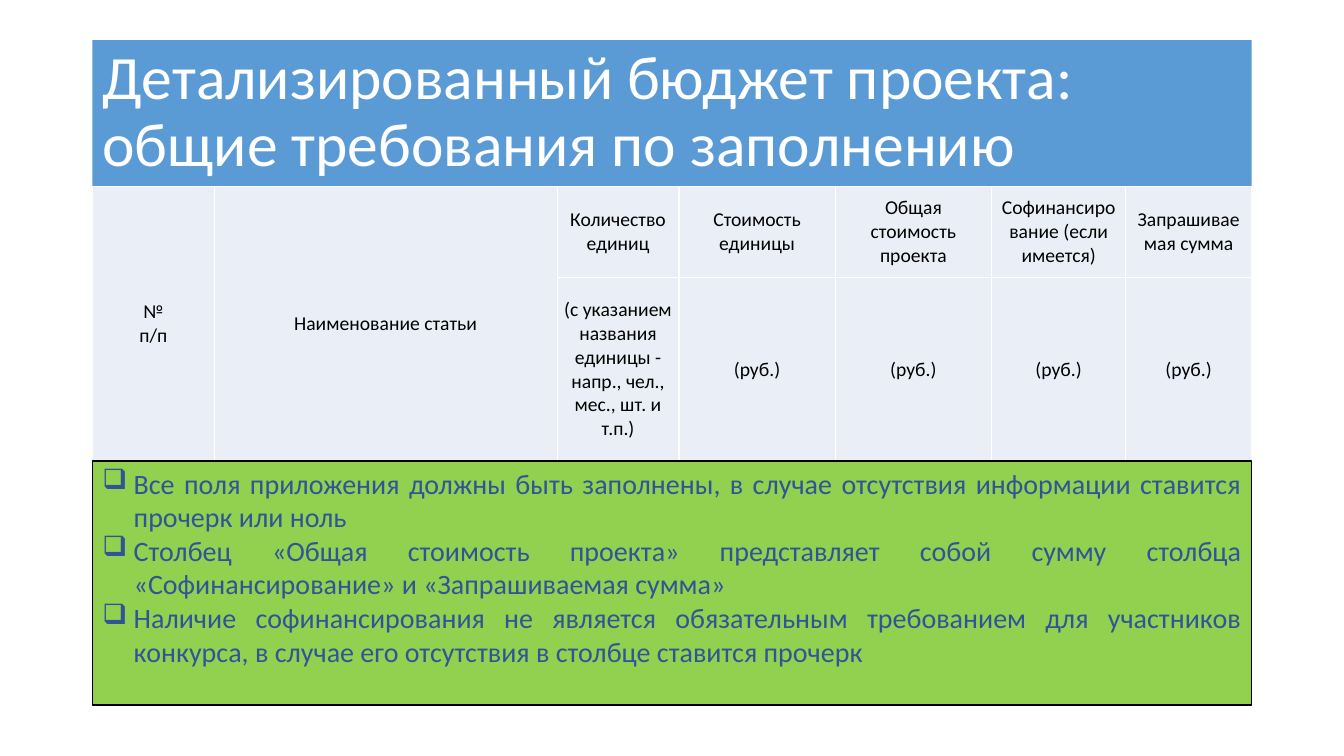
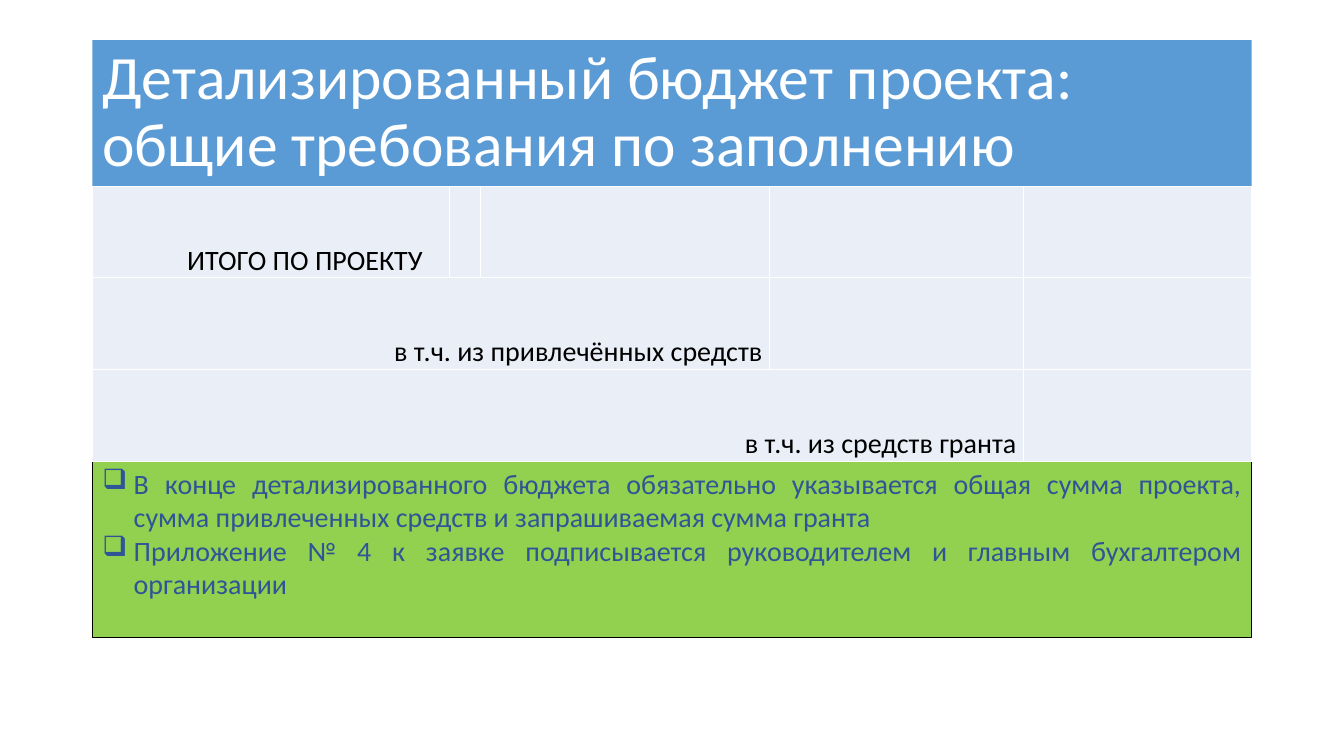
from dataclasses import dataclass

from lxml.etree import SubElement as Sub
from pptx import Presentation
from pptx.dml.color import RGBColor as Rgb
from pptx.enum.shapes import MSO_SHAPE as Shape
from pptx.enum.text import MSO_ANCHOR as Anchor, MSO_AUTO_SIZE as Fit, PP_ALIGN as Align
from pptx.oxml.ns import qn
from pptx.util import Cm, Pt


@dataclass(frozen=True)
class Theme:
    font: str = "Calibri"
    white: Rgb = Rgb(0xFF, 0xFF, 0xFF)
    black: Rgb = Rgb(0, 0, 0)
    band: Rgb = Rgb(0x5B, 0x9B, 0xD5)
    cell: Rgb = Rgb(0xEA, 0xEF, 0xF7)
    green: Rgb = Rgb(0x92, 0xD0, 0x50)
    navy: Rgb = Rgb(0x2F, 0x55, 0x97)
    title: int = 44
    body: int = 20
    small: int = 14


T = Theme()

# Shared layout: one column holding title, table and notes
LEFT, WIDTH = Cm(2.33), Cm(29.21)
TOP, HEAD = Cm(1.01), Cm(3.68)
ROW = 2.31
GRID = TOP + HEAD
NOTES = GRID + 3 * Cm(ROW)
INDENT = Cm(0.79)

TITLE = "Детализированный бюджет проекта: общие требования по заполнению"


def style(frame, size, color, align):
    for para in frame.paragraphs:
        para.alignment = align
        for run in para.runs:
            run.font.name = T.font
            run.font.size = Pt(size)
            run.font.color.rgb = color


def paint(item, color):
    item.fill.solid()
    item.fill.fore_color.rgb = color


def add_slide(deck):
    """Title-only slide with the blue title band."""
    slide = deck.slides.add_slide(deck.slide_layouts[5])
    title = slide.shapes.title
    title.left, title.top, title.width, title.height = LEFT, TOP, WIDTH, HEAD
    paint(title, T.band)
    frame = title.text_frame
    frame.text = TITLE
    frame.word_wrap = True
    frame.auto_size = Fit.NONE
    frame.vertical_anchor = Anchor.MIDDLE
    frame.paragraphs[0].line_spacing = 0.9
    style(frame, T.title, T.white, Align.LEFT)
    return slide


def edge(cell):
    """White borders on all four sides."""
    props = cell._tc.get_or_add_tcPr()
    for side in ("lnL", "lnR", "lnT", "lnB"):
        line = Sub(props, qn(f"a:{side}"), w=str(Pt(1)))
        fill = Sub(line, qn("a:solidFill"))
        Sub(fill, qn("a:srgbClr"), val=str(T.white))


def add_grid(slide, cols, rows, texts, spans, size, align, anchor, pad):
    """Table; texts maps (row, col) to text, spans pairs corner cells."""
    high = sum(Cm(r) for r in rows)
    grid = slide.shapes.add_table(len(rows), len(cols), LEFT, GRID, WIDTH, high).table
    grid.first_row = grid.horz_banding = False
    for col, wide in zip(grid.columns, cols):
        col.width = Cm(wide)
    for row, tall in zip(grid.rows, rows):
        row.height = Cm(tall)
    for cell in grid.iter_cells():
        edge(cell)
        paint(cell, T.cell)
        cell.margin_left = cell.margin_right = Cm(pad)
        cell.margin_top = cell.margin_bottom = 0
        cell.vertical_anchor = anchor
    for start, end in spans:
        grid.cell(*start).merge(grid.cell(*end))
    for place, text in texts.items():
        frame = grid.cell(*place).text_frame
        frame.text = text
        style(frame, size, T.black, align)
    return grid


def add_notes(slide, high, lines):
    """Green box with hollow-square bullets."""
    box = slide.shapes.add_shape(Shape.RECTANGLE, LEFT, NOTES, WIDTH, Cm(high))
    box.shadow.inherit = False
    paint(box, T.green)
    box.line.color.rgb = T.black
    box.line.width = Pt(1)
    frame = box.text_frame
    frame.word_wrap = True
    frame.vertical_anchor = Anchor.TOP
    frame.text = "\n".join(lines)
    for para in frame.paragraphs:
        props = para._p.get_or_add_pPr()
        props.set("marL", str(INDENT))
        props.set("indent", str(-INDENT))
        Sub(props, qn("a:buChar"), char="❑")
    style(frame, T.body, T.navy, Align.JUSTIFY)


def add_heads(deck):
    """Column headings of the budget form."""
    slide = add_slide(deck)
    heads = ["№\nп/п", "Наименование статьи", "Количество единиц",
             "Стоимость единицы", "Общая стоимость проекта",
             "Софинансирование (если имеется)", "Запрашиваемая сумма"]
    texts = {(0, i): head for i, head in enumerate(heads)}
    texts[1, 2] = "(с указанием названия единицы - напр., чел., мес., шт. и т.п.)"
    texts.update({(1, i): "(руб.)" for i in range(3, 7)})
    add_grid(slide, [3.07, 8.64, 3.07, 3.94, 3.94, 3.38, 3.17], [ROW, 2 * ROW],
             texts, [((0, i), (1, i)) for i in range(2)],
             T.small, Align.CENTER, Anchor.MIDDLE, 0.16)
    add_notes(slide, 6.15, [
        "Все поля приложения должны быть заполнены, в случае отсутствия "
        "информации ставится прочерк или ноль",
        "Столбец «Общая стоимость проекта» представляет собой сумму столбца "
        "«Софинансирование» и «Запрашиваемая сумма»",
        "Наличие софинансирования не является обязательным требованием для "
        "участников конкурса, в случае его отсутствия в столбце ставится прочерк",
    ])


def add_sums(deck):
    """Closing totals of the budget form."""
    slide = add_slide(deck)
    add_notes(slide, 4.45, [
        "В конце детализированного бюджета обязательно указывается общая сумма "
        "проекта, сумма привлеченных средств и запрашиваемая сумма гранта",
        "Приложение № 4 к заявке подписывается руководителем и главным "
        "бухгалтером организации",
    ])
    texts = {(0, 0): "ИТОГО ПО ПРОЕКТУ",
             (1, 0): "в т.ч. из привлечённых средств",
             (2, 0): "в т.ч. из средств гранта"}
    grid = add_grid(slide, [8.99, 0.79, 7.29, 6.4, 5.74], [ROW] * 3, texts,
                    [((1, 0), (1, 2)), ((2, 0), (2, 3))],
                    T.body, Align.RIGHT, Anchor.BOTTOM, 0.18)
    grid.cell(0, 0).margin_right = Cm(0.66)


def main():
    deck = Presentation()
    deck.slide_width, deck.slide_height = Cm(33.87), Cm(19.05)
    add_heads(deck)
    add_sums(deck)
    deck.save("out.pptx")


if __name__ == "__main__":
    main()
